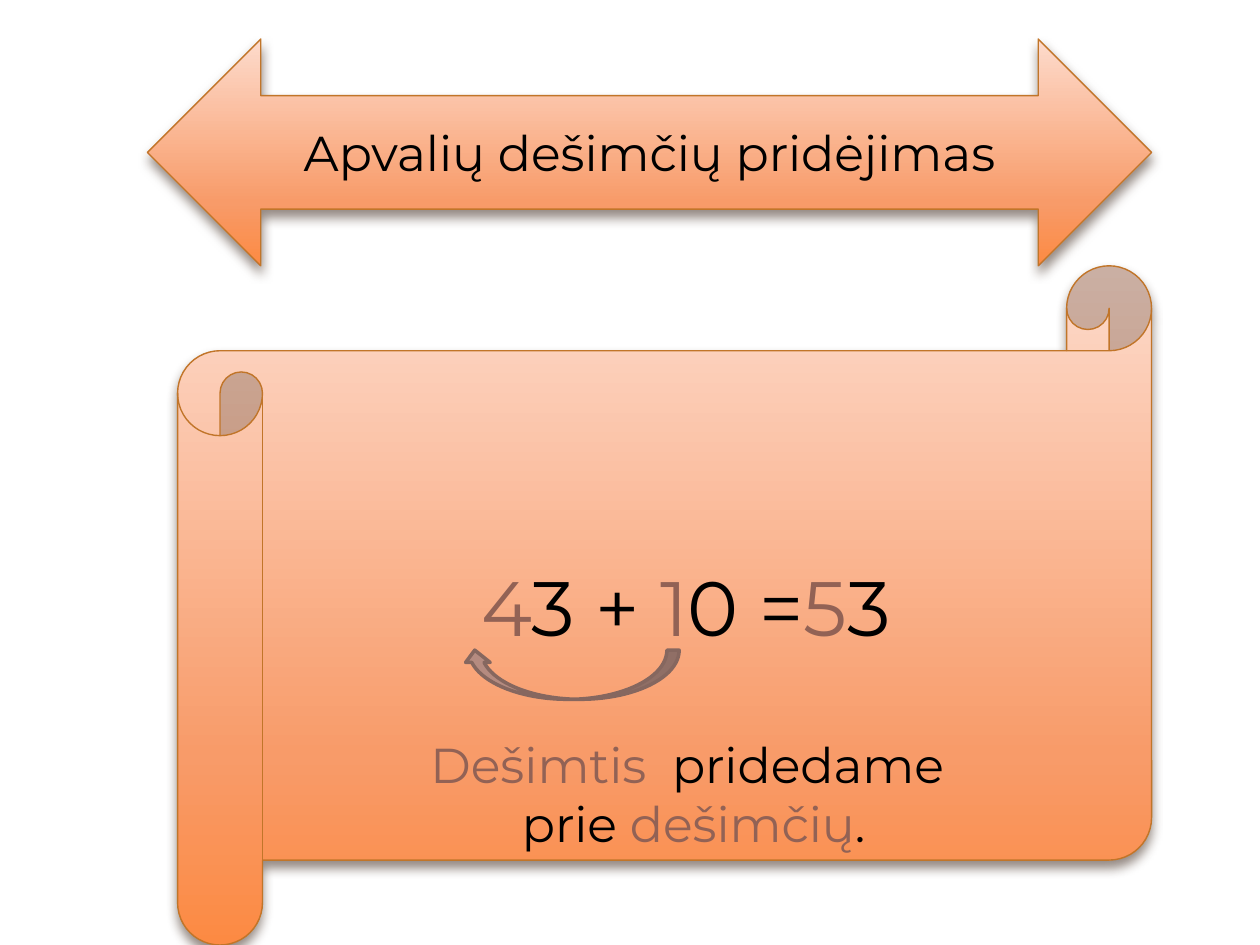
from pptx import Presentation
from pptx.dml.color import RGBColor
from pptx.enum.shapes import MSO_SHAPE
from pptx.enum.text import MSO_ANCHOR, PP_ALIGN
from pptx.oxml import parse_xml
from pptx.oxml.ns import nsdecls
from pptx.util import Inches, Pt

COLORS = {
    "light": "FDDBCC", "mid": "F89B69", "deep": "FC8A43",
    "edge": "C17529", "shadow": "4E3B30", "text": "000000",
    "accent": "926255", "arrow": "B58B80", "arrow_edge": "86675F",
}
GRADIENT = [(0, "light"), (72, "mid"), (100, "deep")]


class SlideBuilder:
    font = "Montserrat"

    def __init__(self, slide):
        self.s = slide

    def color(self, name):
        return RGBColor.from_string(COLORS[name])

    def shape(self, kind, box, fill, line, width):
        sp = self.s.shapes.add_shape(kind, *map(Inches, box))
        sp.shadow.inherit = False
        sp.fill.solid()
        sp.fill.fore_color.rgb = self.color(fill)
        sp.line.color.rgb = self.color(line)
        sp.line.width = Pt(width)
        return sp

    def banner(self, kind, box, lines, size):
        sp = self.shape(kind, box, "mid", "edge", 0.79)
        stops = "".join(
            f'<a:gs pos="{pos * 1000}"><a:srgbClr val="{COLORS[name]}"/></a:gs>'
            for pos, name in GRADIENT)
        spPr = sp._element.spPr
        solid = spPr.find("{*}solidFill")
        spPr.replace(solid, parse_xml(
            f'<a:gradFill {nsdecls("a")} rotWithShape="1"><a:gsLst>{stops}</a:gsLst>'
            '<a:lin ang="5400000" scaled="0"/></a:gradFill>'))
        effects = spPr.find("{*}effectLst")
        effects.append(parse_xml(
            f'<a:outerShdw {nsdecls("a")} blurRad="{Pt(6)}" dist="{Pt(4)}" '
            f'dir="5400000" rotWithShape="0"><a:srgbClr val="{COLORS["shadow"]}">'
            '<a:alpha val="60000"/></a:srgbClr></a:outerShdw>'))
        sp.text_frame.vertical_anchor = MSO_ANCHOR.MIDDLE
        self.add_lines(sp.text_frame, lines, size)

    def textbox(self, box, lines, size):
        sp = self.s.shapes.add_textbox(*map(Inches, box))
        sp.text_frame.word_wrap = True
        self.add_lines(sp.text_frame, lines, size)

    def add_lines(self, tf, lines, size):
        for i, runs in enumerate(lines):
            p = tf.add_paragraph() if i else tf.paragraphs[0]
            p.alignment = PP_ALIGN.CENTER
            for text, color in runs:
                r = p.add_run()
                r.text = text
                r.font.name = self.font
                r.font.size = Pt(size)
                r.font.color.rgb = self.color(color)


def main():
    prs = Presentation()
    prs.slide_width, prs.slide_height = Inches(10), Inches(7.5)
    b = SlideBuilder(prs.slides.add_slide(prs.slide_layouts[6]))

    b.banner(MSO_SHAPE.LEFT_RIGHT_ARROW, (1.17, 0.31, 7.97, 1.8),
             [[("Apvalių dešimčių pridėjimas", "text")]], 28)
    b.banner(MSO_SHAPE.HORIZONTAL_SCROLL, (1.41, 2.11, 7.73, 5.39),
             [[("4", "accent"), ("3 + ", "text"), ("1", "accent"),
               ("0 =", "text"), ("5", "accent"), ("3", "text")]], 44)
    arrow = b.shape(MSO_SHAPE.CURVED_DOWN_ARROW, (3.67, 5.16, 1.72, 0.39),
                    "arrow", "arrow_edge", 2)
    arrow.rotation = 180
    b.textbox((2.27, 5.78, 6.47, 1.04),
              [[("Dešimtis  ", "accent"), ("pridedame ", "text")],
               [("prie ", "text"), ("dešimčių", "accent"), (".", "text")]], 28)

    prs.save("out.pptx")


if __name__ == "__main__":
    main()
